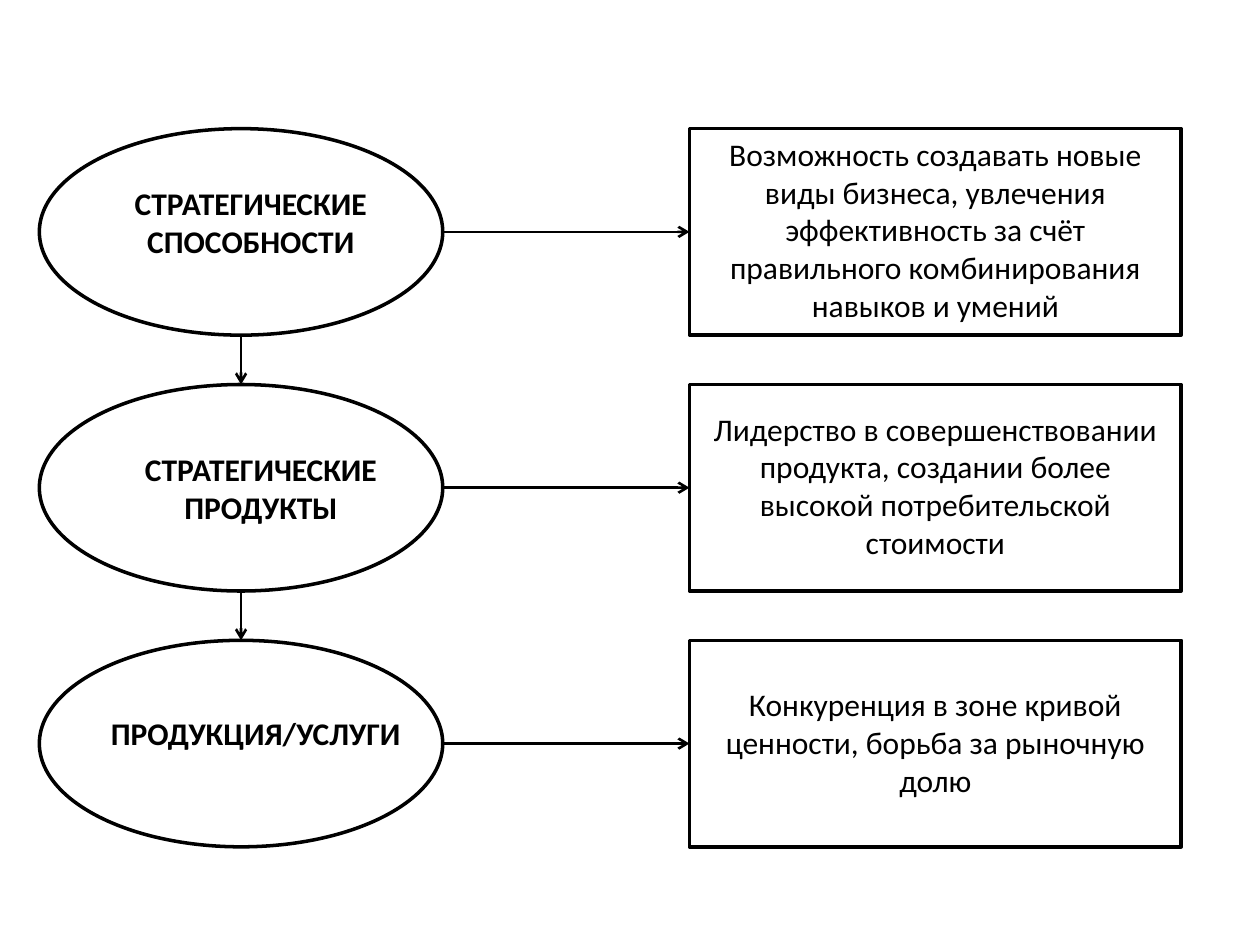
"""Build a slide that links three strategic levels to their descriptions."""
from lxml import etree
from pptx import Presentation
from pptx.dml.color import RGBColor
from pptx.enum.shapes import MSO_CONNECTOR, MSO_SHAPE
from pptx.enum.text import MSO_AUTO_SIZE, PP_ALIGN
from pptx.oxml.ns import qn
from pptx.util import Pt

OVAL, RECTANGLE = MSO_SHAPE.OVAL, MSO_SHAPE.RECTANGLE
STRAIGHT = MSO_CONNECTOR.STRAIGHT
CENTER = PP_ALIGN.CENTER
GROW = MSO_AUTO_SIZE.SHAPE_TO_FIT_TEXT
TOP, LEFT = 0, 1

COLORS = {"ink": "000000"}
FONT = {"name": "Calibri", "size": Pt(18)}

FIRST_TOP, ROW_STEP, ROW_HEIGHT = 73.5, 146.2, 118
OVAL_LEFT, OVAL_WIDTH = 22.5, 230.5
BOX_LEFT, BOX_WIDTH = 394, 281

LEVELS = [
    ("СТРАТЕГИЧЕСКИЕ СПОСОБНОСТИ", (56.2, 101.5, 174.2, 51),
     "Возможность создавать новые виды бизнеса, увлечения эффективность "
     "за счёт правильного комбинирования навыков и умений", (73.5, 116.5)),
    ("СТРАТЕГИЧЕСКИЕ ПРОДУКТЫ", (56.2, 253.5, 185.8, 51),
     "Лидерство в совершенствовании продукта, создании более высокой "
     "потребительской стоимости", (230.5, 94.5)),
    ("ПРОДУКЦИЯ/УСЛУГИ", (50.4, 404.6, 191.5, 29),
     "Конкуренция в зоне кривой ценности, борьба за рыночную долю",
     (388, 72.7)),
]


def ink():
    """Return the colour of text and lines."""
    return RGBColor.from_string(COLORS["ink"])


def add_outline(page, kind, left, top, width):
    """Add an unfilled shape with a black outline."""
    shape = page.shapes.add_shape(kind, Pt(left), Pt(top), Pt(width), Pt(ROW_HEIGHT))
    shape.shadow.inherit = False
    shape.fill.background()
    shape.line.color.rgb = ink()
    shape.line.width = Pt(2)
    return shape


def add_text(page, text, place, bold=False):
    """Add a centred, wrapping text box."""
    box = page.shapes.add_textbox(*map(Pt, place))
    frame = box.text_frame
    frame.word_wrap = True
    frame.auto_size = GROW
    para = frame.paragraphs[0]
    para.alignment = CENTER
    span = para.add_run()
    span.text = text
    for name, value in {**FONT, "bold": bold}.items():
        setattr(span.font, name, value)
    span.font.color.rgb = ink()


def add_arrow(page, start_x, start_y, target, side):
    """Add an arrow from a point to a side of the target shape."""
    arrow = page.shapes.add_connector(
        STRAIGHT, Pt(start_x), Pt(start_y), Pt(start_x), Pt(start_y))
    arrow.end_connect(target, side)
    arrow.line.color.rgb = ink()
    arrow.line.width = Pt(1.5)
    etree.SubElement(arrow.line._get_or_add_ln(), qn("a:tailEnd"), type="arrow")
    etree.SubElement(arrow._element.spPr, qn("a:effectLst"))


def add_level(page, index, level):
    """Add one row: oval, label, description box and the arrows to them."""
    label, label_place, description, (text_top, text_height) = level
    top = FIRST_TOP + index * ROW_STEP
    oval = add_outline(page, OVAL, OVAL_LEFT, top, OVAL_WIDTH)
    add_text(page, label, label_place, bold=True)
    box = add_outline(page, RECTANGLE, BOX_LEFT, top, BOX_WIDTH)
    add_text(page, description, (BOX_LEFT, text_top, BOX_WIDTH, text_height))
    add_arrow(page, OVAL_LEFT + OVAL_WIDTH, top + ROW_HEIGHT / 2, box, LEFT)
    if index:
        previous_bottom = top - ROW_STEP + ROW_HEIGHT
        add_arrow(page, OVAL_LEFT + OVAL_WIDTH / 2, previous_bottom, oval, TOP)


def main():
    """Build and save the deck."""
    deck = Presentation()
    deck.slide_width, deck.slide_height = Pt(720), Pt(540)
    page = deck.slides.add_slide(deck.slide_layouts[6])
    for index, level in enumerate(LEVELS):
        add_level(page, index, level)
    deck.save("out.pptx")


if __name__ == "__main__":
    main()
